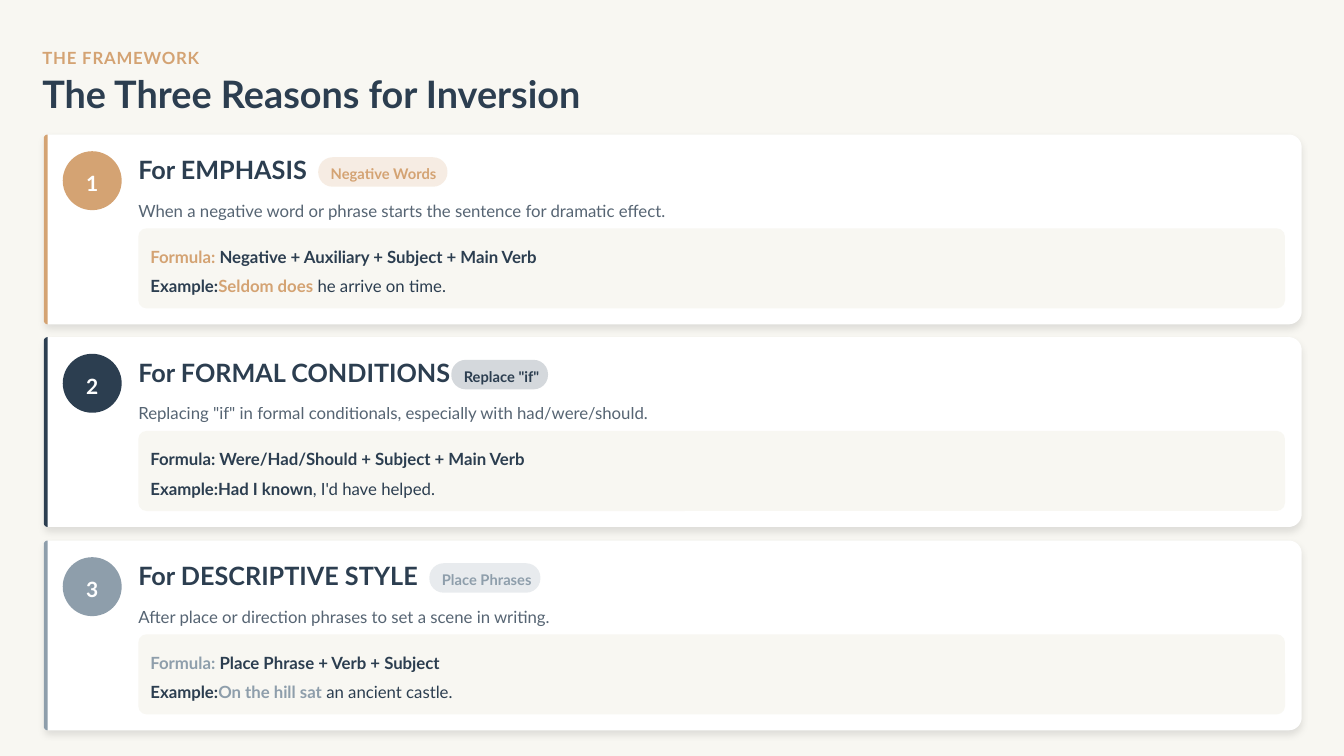
"""Build the slide on the three reasons for inversion."""
from math import cos, pi, sin

from lxml import etree
from pptx import Presentation
from pptx.dml.color import RGBColor
from pptx.enum.shapes import MSO_SHAPE
from pptx.enum.text import MSO_ANCHOR, PP_ALIGN
from pptx.oxml.ns import qn
from pptx.util import Inches, Pt

OVAL, ROUNDED = MSO_SHAPE.OVAL, MSO_SHAPE.ROUNDED_RECTANGLE
MIDDLE = MSO_ANCHOR.MIDDLE
LEFT, CENTER = PP_ALIGN.LEFT, PP_ALIGN.CENTER
FONT = "Lato"
TAN, NAVY, SLATE = "D4A373", "2C3E50", "8E9EAB"
CREAM, WHITE = "F8F7F2", "FFFFFF"

REASONS = [
    (1.78, TAN, "For EMPHASIS", 4.21, 1.71, "Negative Words",
     "When a negative word or phrase starts the sentence for dramatic effect.",
     "Negative + Auxiliary + Subject + Main Verb",
     "Seldom does", " he arrive on time."),
    (4.46, NAVY, "For FORMAL CONDITIONS", 5.97, 1.28, 'Replace "if"',
     'Replacing "if" in formal conditionals, especially with had/were/should.',
     "Were/Had/Should + Subject + Main Verb",
     "Had I known", ", I'd have helped."),
    (7.15, SLATE, "For DESCRIPTIVE STYLE", 5.68, 1.47, "Place Phrases",
     "After place or direction phrases to set a scene in writing.",
     "Place Phrase + Verb + Subject",
     "On the hill sat", " an ancient castle."),
]


def paint(fill, color, alpha=100):
    fill.solid()
    fill.fore_color.rgb = RGBColor.from_string(color)
    if alpha < 100:
        clr = fill._xPr.find(".//" + qn("a:srgbClr"))
        etree.SubElement(clr, qn("a:alpha"), val=str(alpha * 1000))


class Deck:
    def __init__(self):
        self.prs = Presentation()
        self.prs.slide_width, self.prs.slide_height = Inches(17.78), Inches(10)
        self.s = self.prs.slides.add_slide(self.prs.slide_layouts[6])
        paint(self.s.background.fill, CREAM)

    def finish(self, sp, color, alpha=100):
        paint(sp.fill, color, alpha)
        sp.line.fill.background()
        sp.shadow.inherit = False
        return sp

    def shape(self, kind, box, color, alpha=100, radius=None):
        sp = self.s.shapes.add_shape(kind, *map(Inches, box))
        if radius is not None:
            sp.adjustments[0] = radius / min(box[2:])
        return self.finish(sp, color, alpha)

    def outline(self, box, left_radius, right_radius, color):
        x, y, w, h = box
        corners = [(x, y, left_radius, 1, 1), (x + w, y, right_radius, -1, 1),
                   (x + w, y + h, right_radius, -1, -1), (x, y + h, left_radius, 1, -1)]
        points = []
        for i, (cx, cy, r, dx, dy) in enumerate(corners):
            for step in range(13):
                a = pi + (i + step / 12) * pi / 2
                points.append((Inches(cx + r * (dx + cos(a))),
                               Inches(cy + r * (dy + sin(a)))))
        builder = self.s.shapes.build_freeform(*points[0], scale=1.0)
        builder.add_line_segments(points[1:], close=True)
        return self.finish(builder.convert_to_shape(), color)

    def drop_shadow(self, sp):
        effects = sp._element.spPr.find(qn("a:effectLst"))
        shadow = etree.SubElement(effects, qn("a:outerShdw"), blurRad=str(Pt(6)),
                                  dist=str(Pt(4)), dir="5400000", algn="ctr",
                                  rotWithShape="0")
        clr = etree.SubElement(shadow, qn("a:srgbClr"), val="000000")
        etree.SubElement(clr, qn("a:alpha"), val="10000")

    def add_runs(self, sp, runs, size, spacing, align=LEFT, insets=(0, 0), alpha=100, track=0):
        tf = sp.text_frame
        tf.word_wrap = True
        tf.vertical_anchor = MIDDLE
        tf.margin_left, tf.margin_right = map(Inches, insets)
        tf.margin_top = tf.margin_bottom = 0
        p = tf.paragraphs[0]
        p.alignment, p.line_spacing = align, spacing
        for text, color, bold in runs:
            r = p.add_run()
            r.text = text
            r.font.name, r.font.size, r.font.bold = FONT, Pt(size), bold
            paint(r.font.fill, color, alpha)
            if track:
                r._r.get_or_add_rPr().set("spc", str(track))

    def text(self, box, runs, size, spacing, **style):
        sp = self.s.shapes.add_textbox(*map(Inches, box))
        self.add_runs(sp, runs, size, spacing, **style)

    def reason(self, number, top, color, title, tag_left, tag_width, tag,
               summary, formula, lead, rest):
        self.drop_shadow(self.outline((0.58, top, 16.64, 2.51), 0.05, 0.17, WHITE))
        self.outline((0.58, top, 0.05, 2.51), 0.05, 0, color)
        badge = self.shape(OVAL, (0.83, top + 0.22, 0.78, 0.78), color)
        self.add_runs(badge, [(str(number), WHITE, True)], 20, 1.2, align=CENTER)
        self.text((1.83, top + 0.22, tag_left - 1.83, 0.44), [(title, NAVY, True)], 24, 1.1)
        pill = self.shape(ROUNDED, (tag_left, top + 0.3, tag_width, 0.39), color, 20, 0.19)
        self.add_runs(pill, [(tag, color, True)], 14, 1.2, insets=(0.11, 0.01))
        self.text((1.83, top + 0.8, 15.28, 0.33), [(summary, NAVY, False)], 16, 1.3, alpha=80)
        self.shape(ROUNDED, (1.83, top + 1.24, 15.17, 1.06), CREAM, radius=0.11)
        self.text((1.99, top + 1.41, 14.94, 0.33),
                  [("Formula:", color, True), (" " + formula, NAVY, True)], 16, 1.3)
        self.text((1.99, top + 1.8, 14.94, 0.33),
                  [("Example:", NAVY, True), (lead, color, True), (rest, NAVY, False)], 16, 1.3)


def main():
    deck = Deck()
    deck.text((0.56, 0.56, 16.78, 0.33), [("THE FRAMEWORK", TAN, True)], 16, 1.3, track=80)
    deck.text((0.56, 1, 16.92, 0.56), [("The Three Reasons for Inversion", NAVY, True)], 36, 0.9)
    for number, reason in enumerate(REASONS, 1):
        deck.reason(number, *reason)
    deck.prs.save("out.pptx")


if __name__ == "__main__":
    main()
